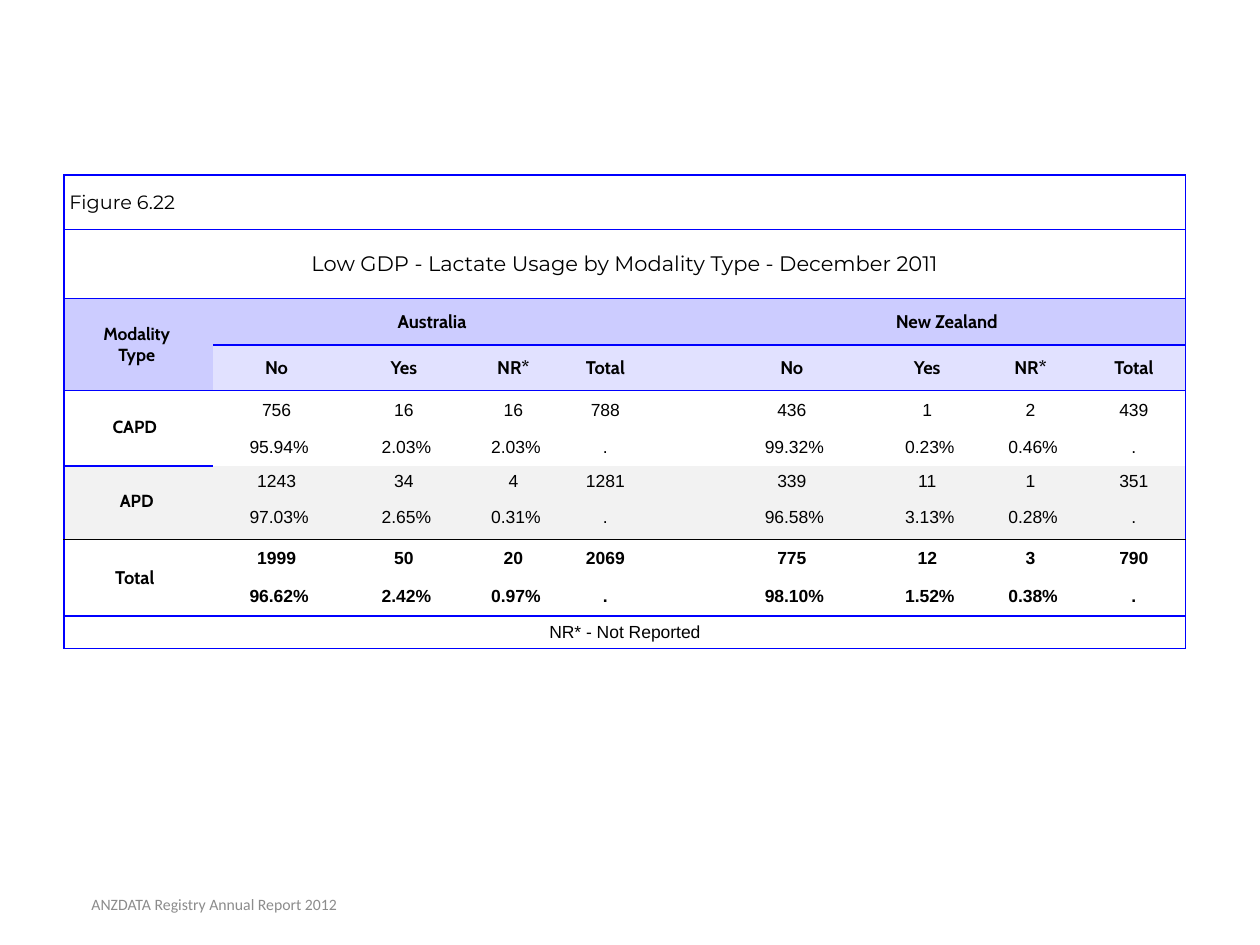
import dataclasses
from typing import Optional

import lxml.etree
import pptx
import pptx.dml.color
import pptx.enum.text
import pptx.oxml.ns
import pptx.table
import pptx.util

Inches = pptx.util.Inches
Pt = pptx.util.Pt
ALIGN = pptx.enum.text.PP_ALIGN
MIDDLE = pptx.enum.text.MSO_ANCHOR.MIDDLE

COLOURS = {
    "text": "000000", "rule": "0000FF", "thin_rule": "000000",
    "header": "CCCCFF", "subheader": "E1E1FF", "band": "F2F2F2",
    "footer": "8C8C8C",
}
COLUMN_WIDTHS = [1.18, 1.01, 1.01, 0.73, 0.73, 0.45, 1.33, 0.82, 0.82, 0.82]
ROW_HEIGHTS = [0.43, 0.55, 0.37, 0.36, 0.31, 0.29, 0.24, 0.34, 0.3, 0.31, 0.26]
LAST_COLUMN = len(COLUMN_WIDTHS) - 1
COUNTRY_COLUMNS = {"Australia": 1, "New Zealand": 6}
ROW_FILLS = {2: "header", 3: "subheader", 6: "band", 7: "band"}
FULL_WIDTH_ROWS = (0, 1, 10)


@dataclasses.dataclass(frozen=True)
class Modality:
    name: str
    first_row: int
    counts: tuple[str, ...]
    percents: tuple[str, ...]
    size: float = 10
    bold: bool = False
    extra_right: float = 0.06


MODALITIES = [
    Modality("CAPD", 4, ("756", "16", "16", "788", "436", "1", "2", "439"),
             ("95.94%", "2.03%", "2.03%", ".", "99.32%", "0.23%", "0.46%", ".")),
    Modality("APD", 6, ("1243", "34", "4", "1281", "339", "11", "1", "351"),
             ("97.03%", "2.65%", "0.31%", ".", "96.58%", "3.13%", "0.28%", "."),
             extra_right=0.03),
    Modality("Total", 8, ("1999", "50", "20", "2069", "775", "12", "3", "790"),
             ("96.62%", "2.42%", "0.97%", ".", "98.10%", "1.52%", "0.38%", "."),
             size=10.5, bold=True),
]
VALUE_COLUMNS = [start + step for start in COUNTRY_COLUMNS.values() for step in range(4)]


def write(frame, text: str, *, font: str = "Arial", size: float = 10,
          bold: bool = False, colour: str = "text", align=ALIGN.CENTER,
          line_spacing: Optional[float] = None) -> None:
    """Fill a text frame, one paragraph for each line of text."""
    for index, line in enumerate(text.split("\n")):
        para = frame.add_paragraph() if index else frame.paragraphs[0]
        para.alignment = align
        if line_spacing:
            para.line_spacing = line_spacing
        span = para.add_run()
        span.text = line
        span.font.name = font
        span.font.size = Pt(size)
        span.font.bold = bold
        span.font.color.rgb = pptx.dml.color.RGBColor.from_string(COLOURS[colour])


def write_cell(cell: pptx.table._Cell, text: str, *, extra_left: float = 0,
               extra_right: float = 0, padding: float = 0.02, **text_format) -> None:
    cell.margin_left = Inches(0.04 + extra_left)
    cell.margin_right = Inches(0.04 + extra_right)
    cell.margin_top = cell.margin_bottom = Inches(padding)
    write(cell.text_frame, text, **text_format)


def rule_below(row: int, column: int) -> Optional[tuple[str, float]]:
    """Colour and width of the line under a grid position."""
    if row == 7:
        return "thin_rule", 0.75
    if row in (-1, 0, 1, 3, 9, 10) or (row == 2 and column) or (row == 5 and not column):
        return "rule", 1
    return None


def set_border(cell: pptx.table._Cell, side: str, rule: Optional[tuple[str, float]]) -> None:
    properties = cell._tc.get_or_add_tcPr()
    qn = pptx.oxml.ns.qn
    line = lxml.etree.SubElement(properties, qn(f"a:ln{side}"))
    if rule is None:
        lxml.etree.SubElement(line, qn("a:noFill"))
        return
    colour, width = rule
    line.set("w", str(Pt(width)))
    fill = lxml.etree.SubElement(line, qn("a:solidFill"))
    lxml.etree.SubElement(fill, qn("a:srgbClr")).set("val", COLOURS[colour])


def style_cell(cell: pptx.table._Cell, row: int, column: int) -> None:
    """Apply borders, fill and anchoring by grid position."""
    last_row = row + cell.span_height - 1 if cell.is_merge_origin else row
    last_column = column + cell.span_width - 1 if cell.is_merge_origin else column
    edge = ("rule", 1)
    set_border(cell, "L", edge if column == 0 else None)
    set_border(cell, "R", edge if last_column == LAST_COLUMN else None)
    set_border(cell, "T", rule_below(row - 1, column))
    set_border(cell, "B", rule_below(last_row, column))
    cell.vertical_anchor = MIDDLE
    if row in ROW_FILLS:
        cell.fill.solid()
        cell.fill.fore_color.rgb = pptx.dml.color.RGBColor.from_string(COLOURS[ROW_FILLS[row]])
    else:
        cell.fill.background()
    if not cell.text:
        # Small end marks keep empty cells from stretching their rows
        cell.margin_top = cell.margin_bottom = Inches(0.02)
        mark = lxml.etree.SubElement(cell.text_frame.paragraphs[0]._p,
                                     pptx.oxml.ns.qn("a:endParaRPr"))
        mark.set("sz", "1000")


def add_usage_table(page) -> None:
    grid = page.shapes.add_table(
        len(ROW_HEIGHTS), len(COLUMN_WIDTHS), Inches(0.51), Inches(1.39),
        Inches(sum(COLUMN_WIDTHS)), Inches(sum(ROW_HEIGHTS))).table
    grid.first_row = grid.horz_banding = False
    for column, width in zip(grid.columns, COLUMN_WIDTHS):
        column.width = Inches(width)
    for row, height in zip(grid.rows, ROW_HEIGHTS):
        row.height = Inches(height)

    # Merged areas
    for row in FULL_WIDTH_ROWS:
        grid.cell(row, 0).merge(grid.cell(row, LAST_COLUMN))
    for row in (2, 4, 6, 8):
        grid.cell(row, 0).merge(grid.cell(row + 1, 0))
    for start in COUNTRY_COLUMNS.values():
        grid.cell(2, start).merge(grid.cell(2, start + 3))

    # Title, headings and note
    write_cell(grid.cell(0, 0), "Figure 6.22", font="Montserrat", size=11,
               align=ALIGN.LEFT, padding=0.04)
    write_cell(grid.cell(1, 0), "Low GDP - Lactate Usage by Modality Type - December 2011",
               font="Montserrat", size=12, padding=0.04)
    write_cell(grid.cell(2, 0), "Modality\nType", font="Cabin", bold=True, extra_right=0.03)
    for country, start in COUNTRY_COLUMNS.items():
        write_cell(grid.cell(2, start), country, font="Cabin", size=10.5, bold=True)
        for step, heading in enumerate(("No", "Yes", "NR*", "Total")):
            write_cell(grid.cell(3, start + step), heading,
                       font="Cabin", size=10.5, bold=True)
    write_cell(grid.cell(10, 0), "NR* - Not Reported")

    # Counts and percentages for each modality
    for modality in MODALITIES:
        top = modality.first_row
        write_cell(grid.cell(top, 0), modality.name, font="Cabin", size=modality.size,
                   bold=True, extra_right=modality.extra_right,
                   line_spacing=None if modality.bold else 0.75)
        for column, count, percent in zip(VALUE_COLUMNS, modality.counts, modality.percents):
            write_cell(grid.cell(top, column), count, bold=modality.bold)
            write_cell(grid.cell(top + 1, column), percent, bold=modality.bold,
                       extra_left=0.04 if percent.endswith("%") else 0)

    for row in range(len(ROW_HEIGHTS)):
        for column in range(len(COLUMN_WIDTHS)):
            style_cell(grid.cell(row, column), row, column)


def add_footer(page) -> None:
    box = page.shapes.add_textbox(Inches(0.2), Inches(6.98), Inches(3), Inches(0.4))
    box.text_frame.word_wrap = True
    box.text_frame.vertical_anchor = MIDDLE
    write(box.text_frame, "ANZDATA Registry Annual Report 2012",
          font="Calibri", size=9, colour="footer")


def main() -> None:
    deck = pptx.Presentation()
    deck.slide_width, deck.slide_height = Inches(10), Inches(7.5)
    page = deck.slides.add_slide(deck.slide_layouts[6])
    add_usage_table(page)
    add_footer(page)
    deck.save("out.pptx")


if __name__ == "__main__":
    main()
